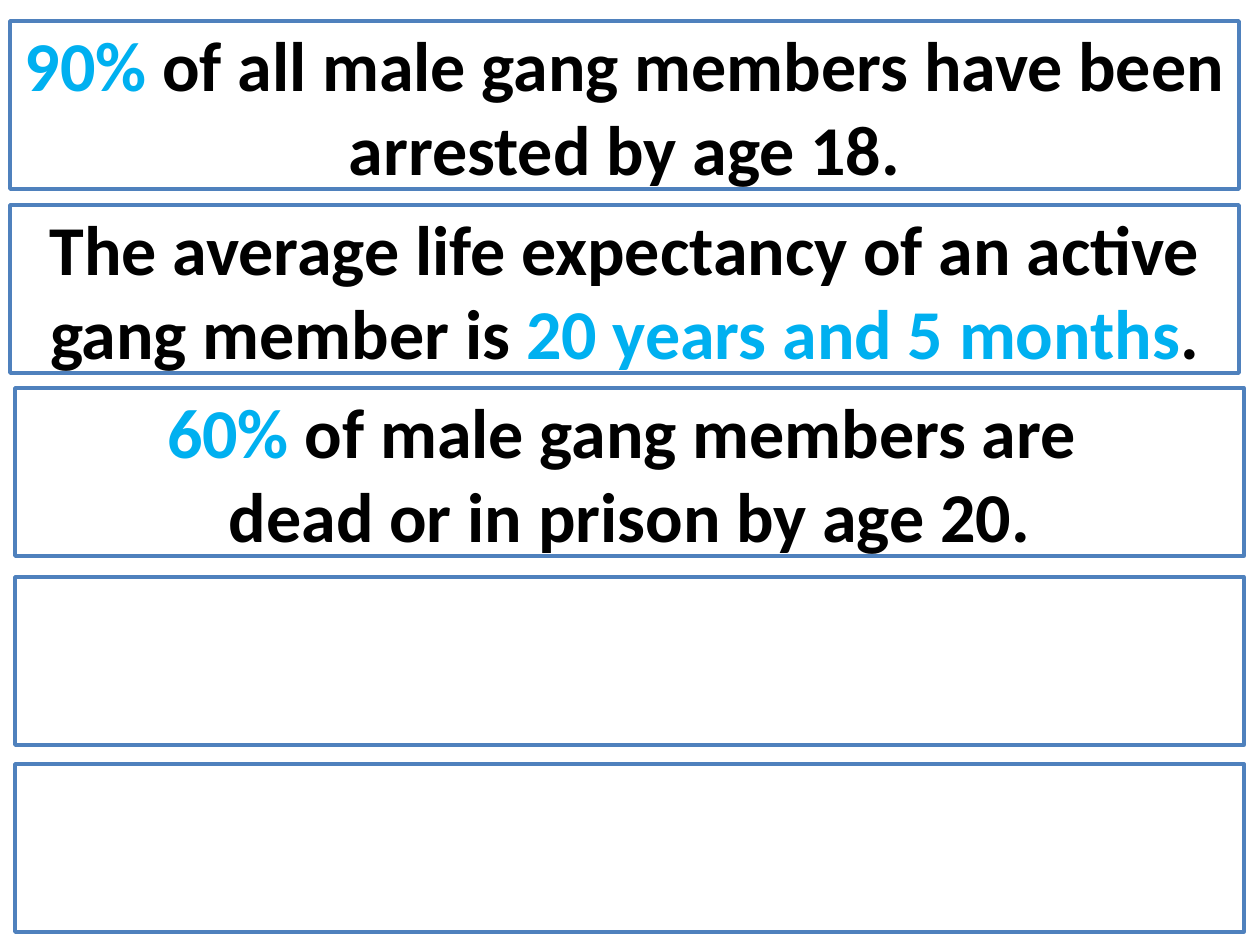
"""Build a slide of stacked fact boxes about gang membership."""
from dataclasses import dataclass

from pptx import Presentation
from pptx import util as u
from pptx.dml.color import RGBColor
from pptx.enum import shapes, text

PX_PER_INCH = 126
BOX_W, BOX_H = 1229, 168
BLACK, WHITE, ACCENT, BORDER = "000000", "FFFFFF", "00B0F0", "4F81BD"


@dataclass(frozen=True)
class Span:
    content: str
    color: str = BLACK


@dataclass(frozen=True)
class FactBox:
    left: int
    top: int
    lines: tuple[tuple[Span, ...], ...] = ()


FACTS = (
    FactBox(10, 21, (
        (Span("90% ", ACCENT),
         Span("of all male gang members have been arrested by age 18.")),
    )),
    FactBox(10, 205, (
        (Span("The average life expectancy of an active gang member is "),
         Span("20 years and 5 months", ACCENT),
         Span(".")),
    )),
    FactBox(15, 388, (
        (Span("60% ", ACCENT), Span("of male gang members are ")),
        (Span("dead or in prison by age 20."),),
    )),
    FactBox(15, 577),
    FactBox(15, 764),
)


def px(n: int) -> u.Emu:
    return u.Emu(round(n * 914400 / PX_PER_INCH))


def rgb(value: str) -> RGBColor:
    return RGBColor.from_string(value)


def add_run(p, content: str, *, color: str = BLACK, size: int = 40,
            bold: bool = True, font: str = "Calibri") -> None:
    r = p.add_run()
    r.text = content
    r.font.name = font
    r.font.size = u.Pt(size)
    r.font.bold = bold
    r.font.color.rgb = rgb(color)


def draw_fact(s, fact: FactBox) -> None:
    sp = s.shapes.add_shape(shapes.MSO_SHAPE.RECTANGLE, px(fact.left),
                            px(fact.top), px(BOX_W), px(BOX_H))
    sp.shadow.inherit = False
    sp.fill.solid()
    sp.fill.fore_color.rgb = rgb(WHITE)
    sp.line.color.rgb = rgb(BORDER)
    sp.line.width = u.Pt(2)
    tf = sp.text_frame
    tf.word_wrap = True
    tf.vertical_anchor = text.MSO_ANCHOR.MIDDLE
    for i, line in enumerate(fact.lines):
        p = tf.add_paragraph() if i else tf.paragraphs[0]
        p.alignment = text.PP_ALIGN.CENTER
        for span in line:
            add_run(p, span.content, color=span.color)


def main() -> None:
    prs = Presentation()
    prs.slide_width, prs.slide_height = px(1260), px(945)
    s = prs.slides.add_slide(prs.slide_layouts[6])
    for fact in FACTS:
        draw_fact(s, fact)
    prs.save("out.pptx")


if __name__ == "__main__":
    main()
